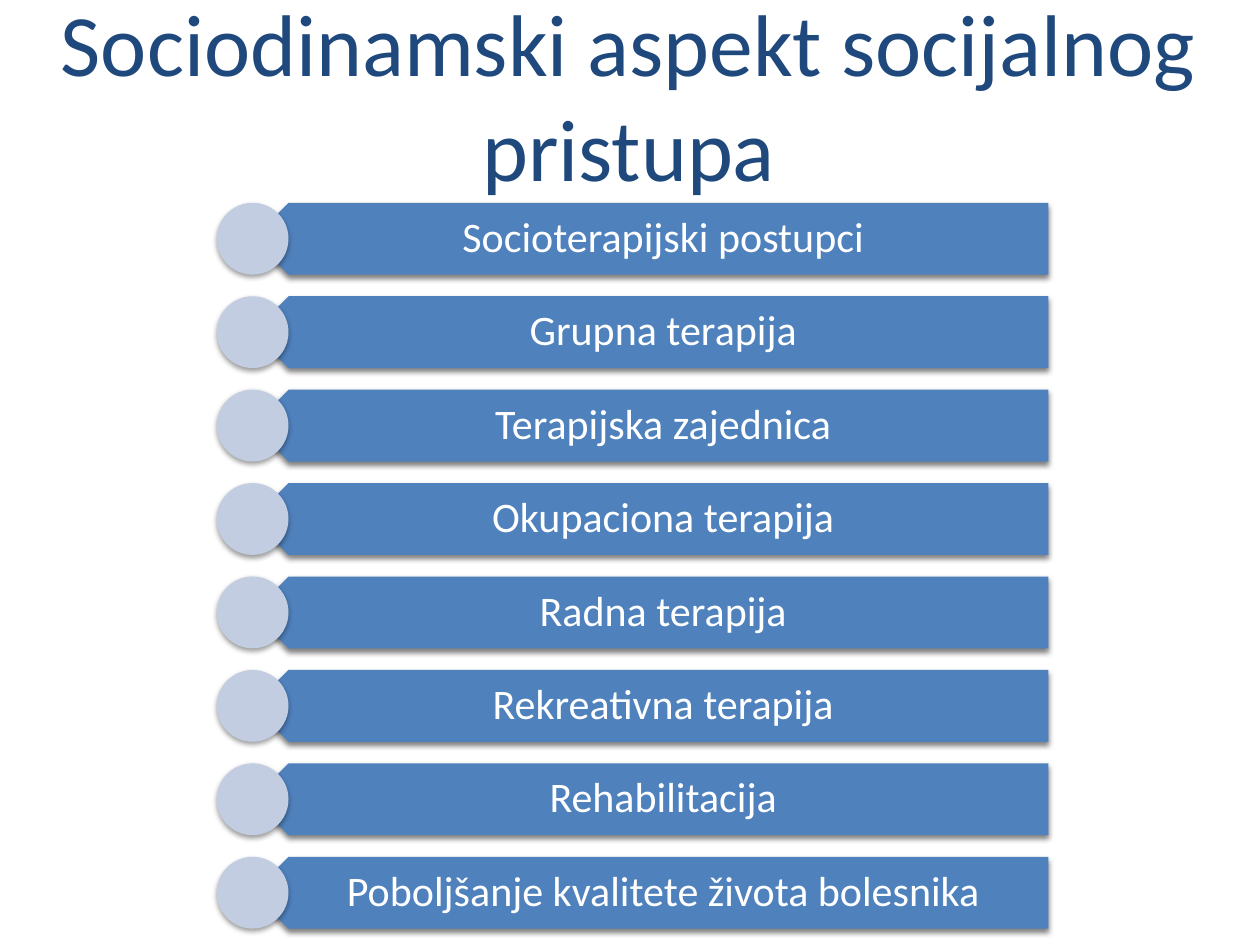
from lxml import etree
from pptx import Presentation
from pptx.dml.color import RGBColor
from pptx.enum.shapes import MSO_SHAPE as Shape
from pptx.enum.text import MSO_ANCHOR as Anchor, PP_ALIGN as Align
from pptx.oxml.ns import qn
from pptx.util import Inches, Pt

NAVY = RGBColor(0x1F, 0x49, 0x7D)
BLUE = RGBColor(0x4F, 0x81, 0xBD)
PALE_BLUE = RGBColor(0xC2, 0xCD, 0xE1)
WHITE = RGBColor(0xFF, 0xFF, 0xFF)

TITLE = "Sociodinamski aspekt socijalnog pristupa"
THERAPIES = [
    "Socioterapijski postupci",
    "Grupna terapija",
    "Terapijska zajednica",
    "Okupaciona terapija",
    "Radna terapija",
    "Rekreativna terapija",
    "Rehabilitacija",
    "Poboljšanje kvalitete života bolesnika",
]

TITLE_FONT = {"name": "Calibri", "size": Pt(50)}
LABEL_FONT = {"name": "Calibri", "size": Pt(24)}
LABEL_FRAME = {
    "margin_left": Inches(0.25),
    "margin_right": Inches(0.19),
    "margin_top": Inches(0.1),
    "margin_bottom": Inches(0.1),
}
BAR_SHADOW = {"opacity": 50, "blur": Pt(3), "distance": Pt(2)}
CIRCLE_SHADOW = {"opacity": 38, "blur": Pt(3.1), "distance": Pt(1.6)}
ROW_HEIGHT = 0.57


def apply_format(target, values):
    for name, value in values.items():
        setattr(target, name, value)


def add_drop_shadow(shape, opacity, blur, distance):
    """Cast a black shadow straight down, whatever the shape's rotation."""
    shape.shadow.inherit = False
    effects = shape._element.spPr.find(qn("a:effectLst"))
    shadow = etree.SubElement(
        effects, qn("a:outerShdw"), blurRad=str(int(blur)),
        dist=str(int(distance)), dir="5400000", rotWithShape="0")
    black = etree.SubElement(shadow, qn("a:srgbClr"), val="000000")
    etree.SubElement(black, qn("a:alpha"), val=str(opacity * 1000))


def add_filled_shape(shapes, preset, box, color, shadow):
    shape = shapes.add_shape(preset, *map(Inches, box))
    shape.fill.solid()
    shape.fill.fore_color.rgb = color
    shape.line.fill.background()
    add_drop_shadow(shape, **shadow)
    return shape


def add_centred_text(shapes, text, box, font, color, frame_format, spacing=1.0):
    frame = shapes.add_textbox(*map(Inches, box)).text_frame
    apply_format(frame, {"word_wrap": True, "vertical_anchor": Anchor.MIDDLE})
    apply_format(frame, frame_format)
    paragraph = frame.paragraphs[0]
    apply_format(paragraph, {"alignment": Align.CENTER, "line_spacing": spacing})
    run = paragraph.add_run()
    run.text = text
    apply_format(run.font, font)
    run.font.color.rgb = color


def add_therapy_row(shapes, therapy, left, top, width):
    """Place an arrow bar whose tip starts under the middle of a circle."""
    radius = ROW_HEIGHT / 2
    bar_box = (left + radius, top, width - radius, ROW_HEIGHT)
    label_box = (left + 1.5 * radius, top, width - 1.5 * radius, ROW_HEIGHT)
    circle_box = (left, top, ROW_HEIGHT, ROW_HEIGHT)

    bar = add_filled_shape(shapes, Shape.PENTAGON, bar_box, BLUE, BAR_SHADOW)
    bar.rotation = 180
    add_centred_text(shapes, therapy, label_box, LABEL_FONT, WHITE,
                     LABEL_FRAME, spacing=0.9)
    add_filled_shape(shapes, Shape.OVAL, circle_box, PALE_BLUE, CIRCLE_SHADOW)


def add_therapy_list(slide, left, top, width, height):
    group = slide.shapes.add_group_shape()
    pitch = (height - ROW_HEIGHT) / (len(THERAPIES) - 1)
    for index, therapy in enumerate(THERAPIES):
        add_therapy_row(group.shapes, therapy, left, top + index * pitch, width)


def main():
    deck = Presentation()
    deck.slide_width = Inches(10)
    deck.slide_height = Inches(7.5)
    slide = deck.slides.add_slide(deck.slide_layouts[6])
    add_centred_text(slide.shapes, TITLE, (0.38, 0, 9.22, 1.5),
                     TITLE_FONT, NAVY, {})
    add_therapy_list(slide, 1.72, 1.61, 6.6, 5.76)
    deck.save("out.pptx")


if __name__ == "__main__":
    main()
